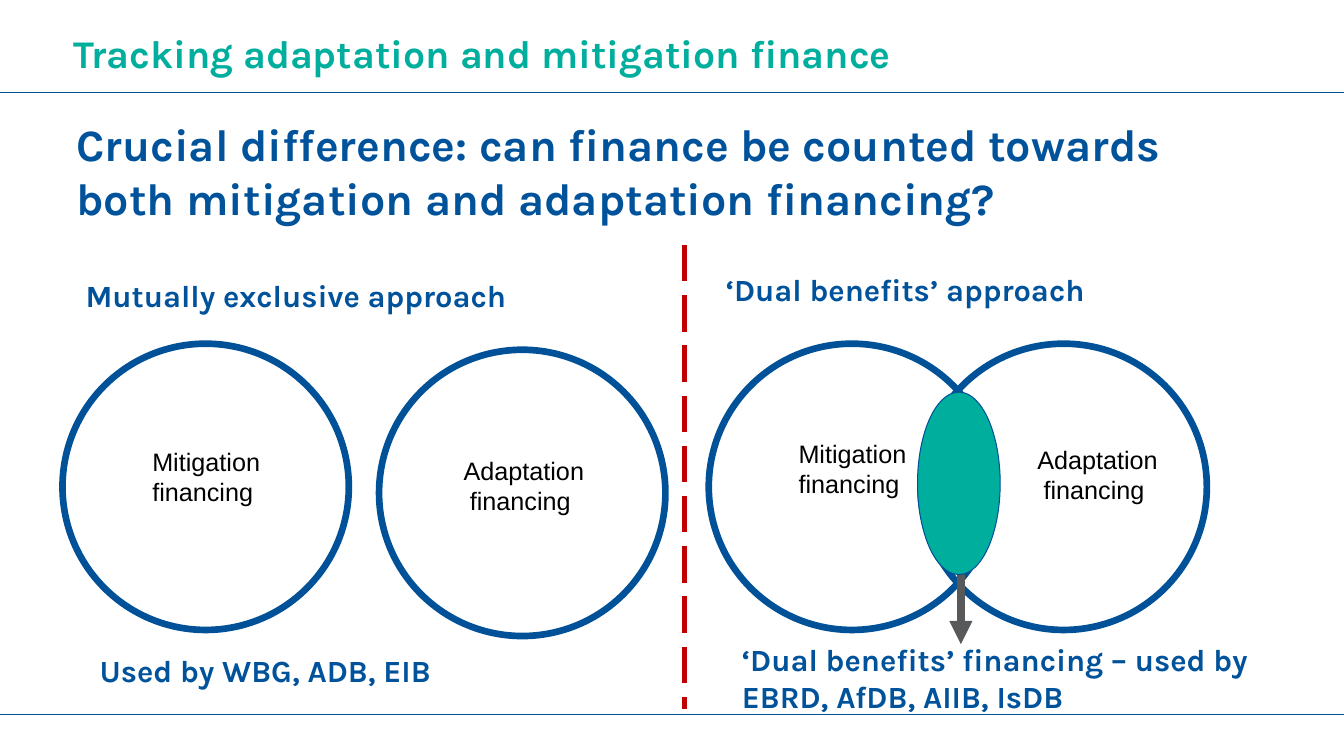
from dataclasses import dataclass

from lxml.etree import SubElement
from pptx import Presentation
from pptx.dml.color import RGBColor
from pptx.enum.dml import MSO_LINE
from pptx.enum.shapes import MSO_CONNECTOR, MSO_SHAPE
from pptx.enum.text import MSO_ANCHOR, MSO_AUTO_SIZE, PP_ALIGN
from pptx.oxml.ns import qn
from pptx.util import Inches, Pt


@dataclass(frozen=True)
class Theme:
    blue: str = "005198"
    heading_blue: str = "00539B"
    teal: str = "00AE9E"
    red: str = "C00000"
    grey: str = "58595B"
    white: str = "FFFFFF"
    black: str = "000000"
    heading_font: str = "Karla"
    label_font: str = "Arial"
    title_size: int = 28
    question_size: int = 32
    caption_size: int = 22
    label_size: int = 18


theme = Theme()


def write(shape, text, font_name, size, color, bold=True, align=PP_ALIGN.LEFT):
    frame = shape.text_frame
    frame.word_wrap = True
    frame.auto_size = MSO_AUTO_SIZE.NONE
    frame.vertical_anchor = MSO_ANCHOR.TOP
    frame.text = text
    paragraph = frame.paragraphs[0]
    paragraph.alignment = align
    font = paragraph.runs[0].font
    font.name, font.size, font.bold = font_name, Pt(size), bold
    font.color.rgb = RGBColor.from_string(color)


def add_line(start, end, color, width):
    line = slide.shapes.add_connector(
        MSO_CONNECTOR.STRAIGHT, *map(Inches, start + end))
    line.line.color.rgb = RGBColor.from_string(color)
    line.line.width = Pt(width)
    SubElement(line._element.spPr, qn("a:effectLst"))
    return line


presentation = Presentation()
presentation.slide_width = Inches(13.33)
presentation.slide_height = Inches(7.5)
slide = presentation.slides.add_slide(presentation.slide_layouts[5])

# Header and footer rules
for y in (0.91, 7.09):
    add_line((0, y), (13.33, y), theme.blue, 0.25)

# Title
title = slide.shapes.title
title.left, title.top, title.width, title.height = map(
    Inches, (0.63, 0.24, 11.01, 0.57))
write(title, "Tracking adaptation and mitigation finance",
      theme.heading_font, theme.title_size, theme.teal)

# Question, approach headings and lists of users
captions = [
    ("Crucial difference: can finance be counted towards both mitigation "
     "and adaptation financing?", theme.question_size, 0.66, 1.11, 11.38, 1.3),
    ("Mutually exclusive approach", theme.caption_size, 0.75, 2.7, 5.9, 0.6),
    ("‘Dual benefits’ approach", theme.caption_size, 7.1, 2.64, 5.55, 0.6),
    ("Used by WBG, ADB, EIB", theme.caption_size, 0.89, 6.42, 4.31, 0.6),
    ("‘Dual benefits’ financing – used by EBRD, AfDB, AIIB, IsDB",
     theme.caption_size, 7.26, 6.31, 5.55, 0.9),
]
for text, size, *place in captions:
    box = slide.shapes.add_textbox(*map(Inches, place))
    write(box, text, theme.heading_font, size, theme.heading_blue)

# Circles: left, top, filled, label text, label left, label top
circles = [
    (0.62, 3.41, True, "Mitigation financing ", 0.95, 4.38),
    (3.76, 3.47, False, "Adaptation financing ", 4.1, 4.47),
    (7.03, 3.41, True, "Mitigation financing ", 7.36, 4.3),
    (9.13, 3.41, False, "Adaptation financing ", 9.79, 4.36),
]
for left, top, filled, text, label_left, label_top in circles:
    circle = slide.shapes.add_shape(
        MSO_SHAPE.OVAL, *map(Inches, (left, top, 2.84, 2.84)))
    circle.shadow.inherit = False
    if filled:
        circle.fill.solid()
        circle.fill.fore_color.rgb = RGBColor.from_string(theme.white)
    else:
        circle.fill.background()
    circle.line.color.rgb = RGBColor.from_string(theme.blue)
    circle.line.width = Pt(4.75)
    label = slide.shapes.add_textbox(
        *map(Inches, (label_left, label_top, 2.19, 0.71)))
    write(label, text, theme.label_font, theme.label_size, theme.black,
          bold=False, align=PP_ALIGN.CENTER)

# Arrow from the overlap to its caption
arrow = add_line((9.53, 5.22), (9.53, 6.39), theme.grey, 5.5)
SubElement(arrow.line._get_or_add_ln(), qn("a:tailEnd"), type="triangle")

# Overlap of the two circles
overlap = slide.shapes.add_shape(
    MSO_SHAPE.OVAL, *map(Inches, (9.1, 3.89, 0.82, 1.81)))
overlap.shadow.inherit = False
overlap.fill.solid()
overlap.fill.fore_color.rgb = RGBColor.from_string(theme.teal)
overlap.line.color.rgb = RGBColor.from_string(theme.blue)
overlap.line.width = Pt(0.75)

# Divider between the approaches
divider = add_line((6.79, 2.43), (6.79, 7.03), theme.red, 3.25)
divider.line.dash_style = MSO_LINE.LONG_DASH

presentation.save("out.pptx")
